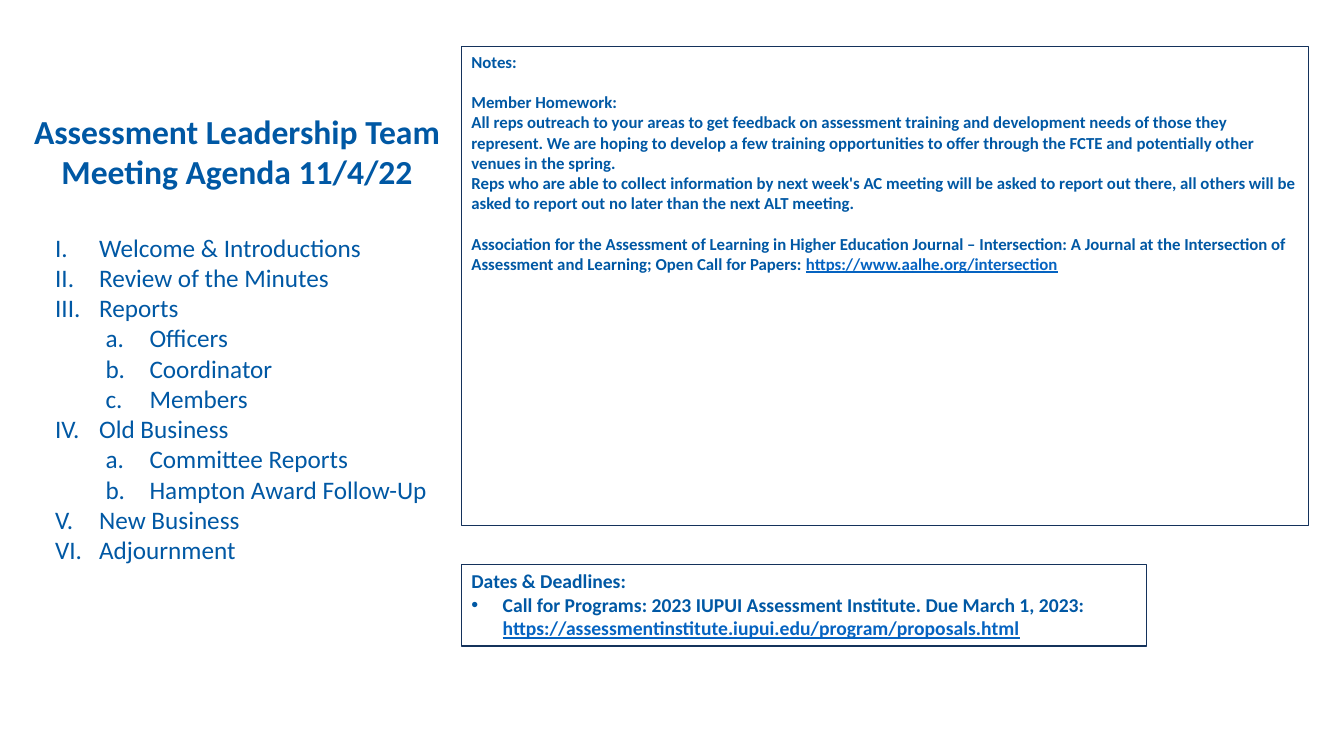
import dataclasses

import lxml.etree
import pptx
import pptx.dml.color
import pptx.enum.shapes
import pptx.enum.text
import pptx.oxml.ns
import pptx.util

Cm, Pt = pptx.util.Cm, pptx.util.Pt
RGB = pptx.dml.color.RGBColor.from_string
ANCHOR = pptx.enum.text.MSO_ANCHOR
ALIGN = pptx.enum.text.PP_ALIGN


@dataclasses.dataclass(frozen=True)
class Theme:
    font: str = "Calibri"
    text: str = "0058A4"
    link: str = "0563C1"
    border: str = "14325B"
    title_size: int = 24
    agenda_size: int = 18
    dates_size: int = 14
    homework_size: int = 12
    border_width: float = 0.75


def add_run(p, text, *, font, size, color, bold=False, underline=False):
    r = p.add_run()
    r.text = text
    r.font.name = font
    r.font.size = Pt(size)
    r.font.color.rgb = RGB(color)
    r.font.bold = bold
    r.font.underline = underline


def set_bullet(p, left, hanging, tag, typeface, **attributes):
    """Give a paragraph a hanging indent (cm) and a buChar or buAutoNum mark."""
    pPr = p._p.get_or_add_pPr()
    pPr.set("marL", str(Cm(left)))
    pPr.set("indent", str(-Cm(hanging)))
    qn = pptx.oxml.ns.qn
    lxml.etree.SubElement(pPr, qn("a:buFont"), typeface=typeface)
    lxml.etree.SubElement(pPr, qn(f"a:{tag}"), **attributes)


class AgendaSlide:
    def __init__(self, prs, theme):
        self.theme = theme
        self.s = prs.slides.add_slide(prs.slide_layouts[5])

    def place(self, sp, left, top, width, height):
        """Position a shape (cm) and return its prepared text frame."""
        sp.left, sp.top, sp.width, sp.height = map(Cm, (left, top, width, height))
        tf = sp.text_frame
        tf.word_wrap = True
        tf.auto_size = pptx.enum.text.MSO_AUTO_SIZE.NONE
        tf.vertical_anchor = ANCHOR.TOP
        return tf

    def paragraph(self, tf, text, size, *, link="", bold=False, align=ALIGN.LEFT, first=False):
        p = tf.paragraphs[0] if first else tf.add_paragraph()
        p.alignment = align
        style = dict(font=self.theme.font, size=size, bold=bold)
        add_run(p, text, color=self.theme.text, **style)
        if link:
            add_run(p, link, color=self.theme.link, underline=True, **style)
        return p

    def title(self, lines, *box):
        tf = self.place(self.s.shapes.title, *box)
        for i, line in enumerate(lines):
            self.paragraph(tf, line, self.theme.title_size, bold=True,
                           align=ALIGN.CENTER, first=i == 0)

    def agenda(self, items, *box):
        """Write a numbered outline; items are (level, text) pairs."""
        tf = self.place(self.s.shapes.add_textbox(0, 0, 0, 0), *box)
        for i, (level, text) in enumerate(items):
            p = self.paragraph(tf, text, self.theme.agenda_size, first=i == 0)
            p.level = level
            scheme = ("romanUcPeriod", "alphaLcPeriod")[level]
            set_bullet(p, 1.11 + 1.27 * level, 1.11, "buAutoNum", "+mj-lt", type=scheme)

    def panel(self, entries, size, *box):
        """Draw an outlined box; entries are (text, link, space before in pt, bulleted)."""
        sp = self.s.shapes.add_shape(pptx.enum.shapes.MSO_SHAPE.RECTANGLE, 0, 0, 0, 0)
        sp.shadow.inherit = False
        sp.fill.background()
        sp.line.color.rgb = RGB(self.theme.border)
        sp.line.width = Pt(self.theme.border_width)
        tf = self.place(sp, *box)
        for i, (text, link, gap, bulleted) in enumerate(entries):
            p = self.paragraph(tf, text, size, link=link, bold=True, first=i == 0)
            if bulleted:
                set_bullet(p, 0.79, 0.79, "buChar", "Arial", char="•")
            if gap:
                p.space_before = Pt(gap)


TITLE = ["Assessment Leadership Team", "Meeting Agenda 11/4/22"]

AGENDA = [
    (0, "Welcome & Introductions"),
    (0, "Review of the Minutes"),
    (0, "Reports"),
    (1, "Officers"),
    (1, "Coordinator"),
    (1, "Members"),
    (0, "Old Business"),
    (1, "Committee Reports"),
    (1, "Hampton Award Follow-Up"),
    (0, "New Business"),
    (0, "Adjournment"),
]

SECTION_GAP = 14.6
HOMEWORK = [
    ("Notes:", "", 0, False),
    ("Member Homework:", "", SECTION_GAP, False),
    ("All reps outreach to your areas to get feedback on assessment training and "
     "development needs of those they represent. We are hoping to develop a few training "
     "opportunities to offer through the FCTE and potentially other venues in the spring.",
     "", 0, False),
    ("Reps who are able to collect information by next week's AC meeting will be asked to "
     "report out there, all others will be asked to report out no later than the next ALT "
     "meeting.", "", 0, False),
    ("Association for the Assessment of Learning in Higher Education Journal – "
     "Intersection: A Journal at the Intersection of Assessment and Learning; Open Call "
     "for Papers: ", "https://www.aalhe.org/intersection", SECTION_GAP, False),
]

DATES = [
    ("Dates & Deadlines:", "", 0, False),
    ("Call for Programs: 2023 IUPUI Assessment Institute. Due March 1, 2023: ",
     "https://assessmentinstitute.iupui.edu/program/proposals.html", 0, True),
]


def main():
    prs = pptx.Presentation()
    prs.slide_width, prs.slide_height = Cm(33.87), Cm(19.05)
    theme = Theme()
    slide = AgendaSlide(prs, theme)
    panel_left = 11.63
    slide.title(TITLE, -0.3, 2.67, 12.55, 2.31)
    slide.agenda(AGENDA, 1.14, 5.72, 10.13, 8.71)
    slide.panel(HOMEWORK, theme.homework_size, panel_left, 1.17, 21.34, 12.07)
    slide.panel(DATES, theme.dates_size, panel_left, 14.22, 17.27, 2.06)
    prs.save("out.pptx")


if __name__ == "__main__":
    main()
